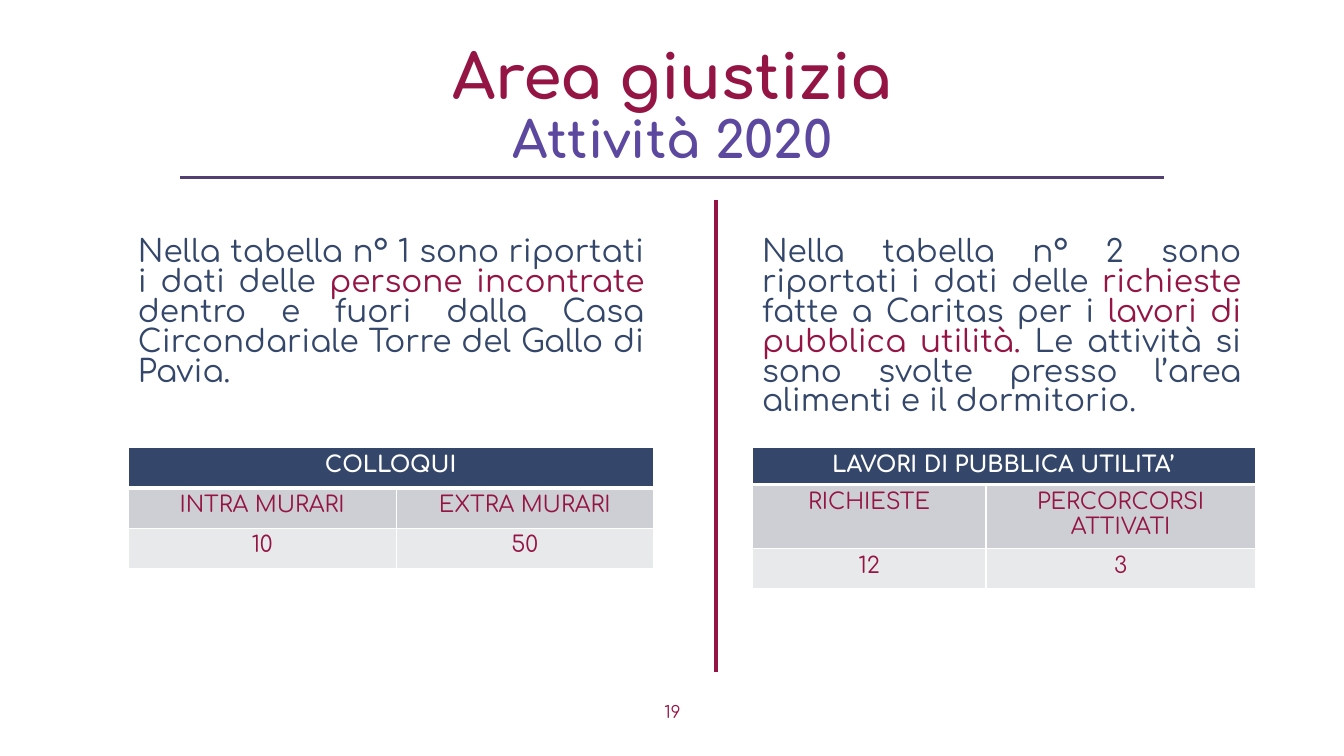
from lxml.etree import SubElement
from pptx import Presentation
from pptx.dml.color import RGBColor
from pptx.enum.shapes import MSO_CONNECTOR
from pptx.enum.text import MSO_ANCHOR, PP_ALIGN
from pptx.oxml.ns import qn
from pptx.util import Inches, Pt

W, H = 13.33, 7.5
FONT = "Comfortaa"
WINE, NAVY, VIOLET, PLUM = "941544", "34476A", "5D489F", "533F71"
WHITE, GREY, PALE = "FFFFFF", "CECFD4", "E8E9EB"
LEFT, RIGHT = 1.27, 7.46
TEXT_TOP, TABLE_TOP = 2.32, 4.44
ROW = 0.4
BODY_SIZE = 22.2


def rgb(color):
    """Turn a hex string into a colour."""
    return RGBColor.from_string(color)


def write(tf, runs, size, align=PP_ALIGN.CENTER, bold=False, spacing=None,
          anchor=MSO_ANCHOR.TOP):
    """Fill a text frame with one paragraph of (text, colour) runs."""
    tf.word_wrap = True
    tf.vertical_anchor = anchor
    p = tf.paragraphs[0]
    p.alignment = align
    p.line_spacing = spacing
    p.space_before = Pt(0)
    for text, color in runs:
        r = p.add_run()
        r.text = text
        r.font.name, r.font.size, r.font.bold = FONT, Pt(size), bold
        r.font.color.rgb = rgb(color)


def place(s, box):
    """Move and size a shape to a box in inches."""
    s.left, s.top, s.width, s.height = (Inches(v) for v in box)


def add_text(slide, box, runs, size, **style):
    """Add a text box with coloured runs."""
    s = slide.shapes.add_textbox(*(Inches(v) for v in box))
    write(s.text_frame, runs, size, **style)


def add_line(slide, start, end, color, width):
    """Add a straight line without a shadow."""
    s = slide.shapes.add_connector(MSO_CONNECTOR.STRAIGHT,
                                   *(Inches(v) for v in start + end))
    s.line.color.rgb = rgb(color)
    s.line.width = Pt(width)
    SubElement(s._element.spPr, qn("a:effectLst"))


def set_borders(cell, bottom):
    """Draw white cell borders, with a given bottom width in points."""
    tcPr = cell._tc.get_or_add_tcPr()
    for side, width in (("L", 1), ("R", 1), ("T", 1), ("B", bottom)):
        ln = SubElement(tcPr, qn(f"a:ln{side}"), w=str(Pt(width)))
        fill = SubElement(ln, qn("a:solidFill"))
        SubElement(fill, qn("a:srgbClr"), val=WHITE)


def add_data_table(slide, left, cols, rows, title, labels, values):
    """Add a table with a merged heading, labels and values."""
    s = slide.shapes.add_table(3, 2, Inches(left), Inches(TABLE_TOP),
                               Inches(sum(cols)), Inches(sum(rows)))
    table = s.table
    for column, width in zip(table.columns, cols):
        column.width = Inches(width)
    for row, height in zip(table.rows, rows):
        row.height = Inches(height)
    table.cell(0, 0).merge(table.cell(0, 1))
    content = ((title, ""), labels, values)
    for i, (texts, fill) in enumerate(zip(content, (NAVY, GREY, PALE))):
        head = i == 0
        for j, text in enumerate(texts):
            cell = table.cell(i, j)
            set_borders(cell, 3 if head else 1)
            cell.fill.solid()
            cell.fill.fore_color.rgb = rgb(fill)
            if text:
                write(cell.text_frame, [(text, WHITE if head else WINE)], 16,
                      bold=head)


def main():
    """Build the slide and save it."""
    prs = Presentation()
    prs.slide_width, prs.slide_height = Inches(W), Inches(H)
    slide = prs.slides.add_slide(prs.slide_layouts[5])

    title = slide.shapes.title
    place(title, (0.92, 0.46, 11.5, 0.66))
    heading = dict(bold=True, spacing=0.9, anchor=MSO_ANCHOR.MIDDLE)
    write(title.text_frame, [("Area giustizia", WINE)], 44, **heading)
    add_text(slide, (0.92, 1.08, 11.5, 0.66), [("Attività 2020", VIOLET)], 36,
             **heading)
    add_line(slide, (1.79, 1.76), (11.54, 1.76), PLUM, 2.5)
    add_line(slide, (7.1, 1.98), (7.1, 6.67), WINE, 3)

    body = dict(align=PP_ALIGN.JUSTIFY, spacing=0.8)
    add_text(slide, (LEFT, TEXT_TOP, 5.22, 2.1), [
        ("Nella tabella n° 1 sono riportati i dati delle ", NAVY),
        ("persone incontrate ", WINE),
        ("dentro e fuori dalla Casa Circondariale Torre del Gallo di Pavia.",
         NAVY)], BODY_SIZE, **body)
    add_text(slide, (RIGHT, TEXT_TOP, 4.95, 2.1), [
        ("Nella tabella n° 2 sono riportati i dati delle ", NAVY),
        ("richieste ", WINE),
        ("fatte a Caritas per i ", NAVY),
        ("lavori di pubblica utilità. ", WINE),
        ("Le attività si sono svolte presso l’area alimenti e il dormitorio.",
         NAVY)], BODY_SIZE, **body)

    add_data_table(slide, LEFT, (2.66, 2.55), (ROW, ROW, ROW), "COLLOQUI",
                   ("INTRA MURARI", "EXTRA MURARI"), ("10", "50"))
    add_data_table(slide, RIGHT, (2.32, 2.67), (0.34, 0.58, ROW),
                   "LAVORI DI PUBBLICA UTILITA’",
                   ("RICHIESTE", "PERCORCORSI ATTIVATI"), ("12", "3"))
    add_text(slide, (6.05, 6.91, 1.24, 0.3), [("19", WINE)], 12)
    prs.save("out.pptx")


if __name__ == "__main__":
    main()
